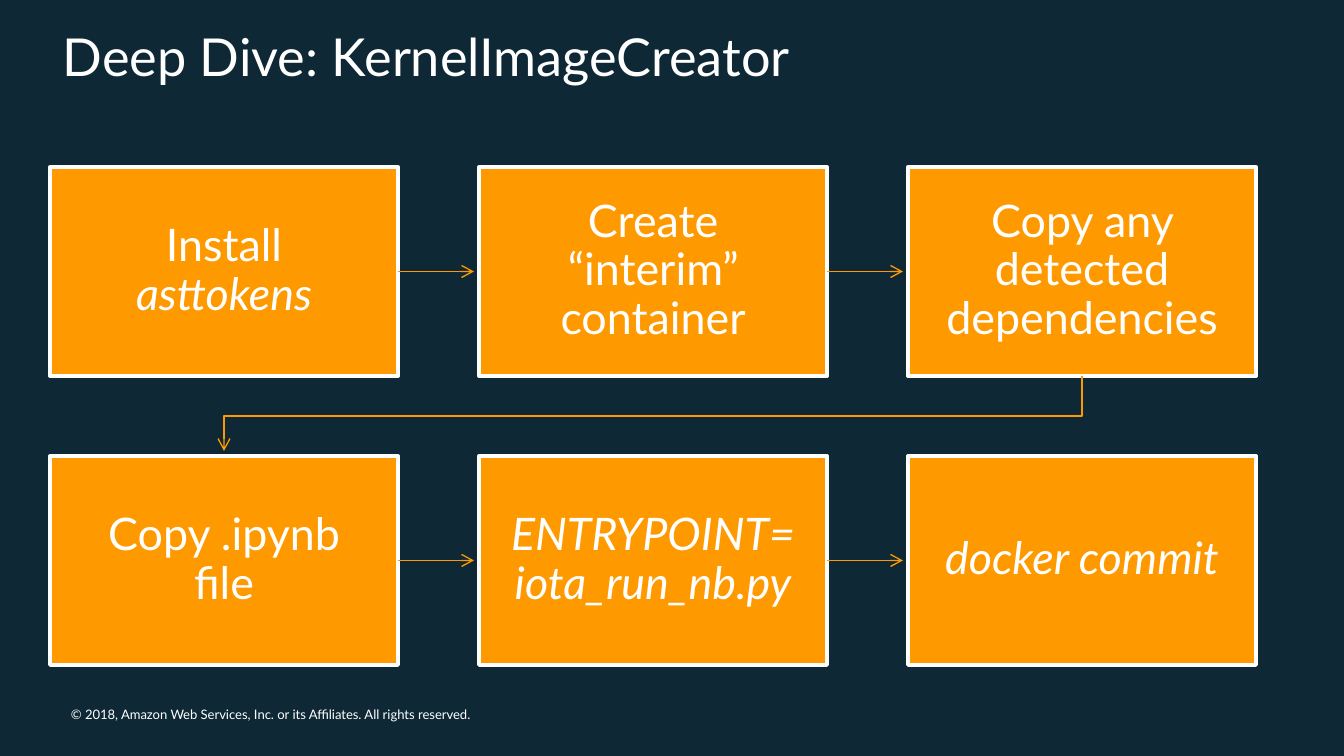
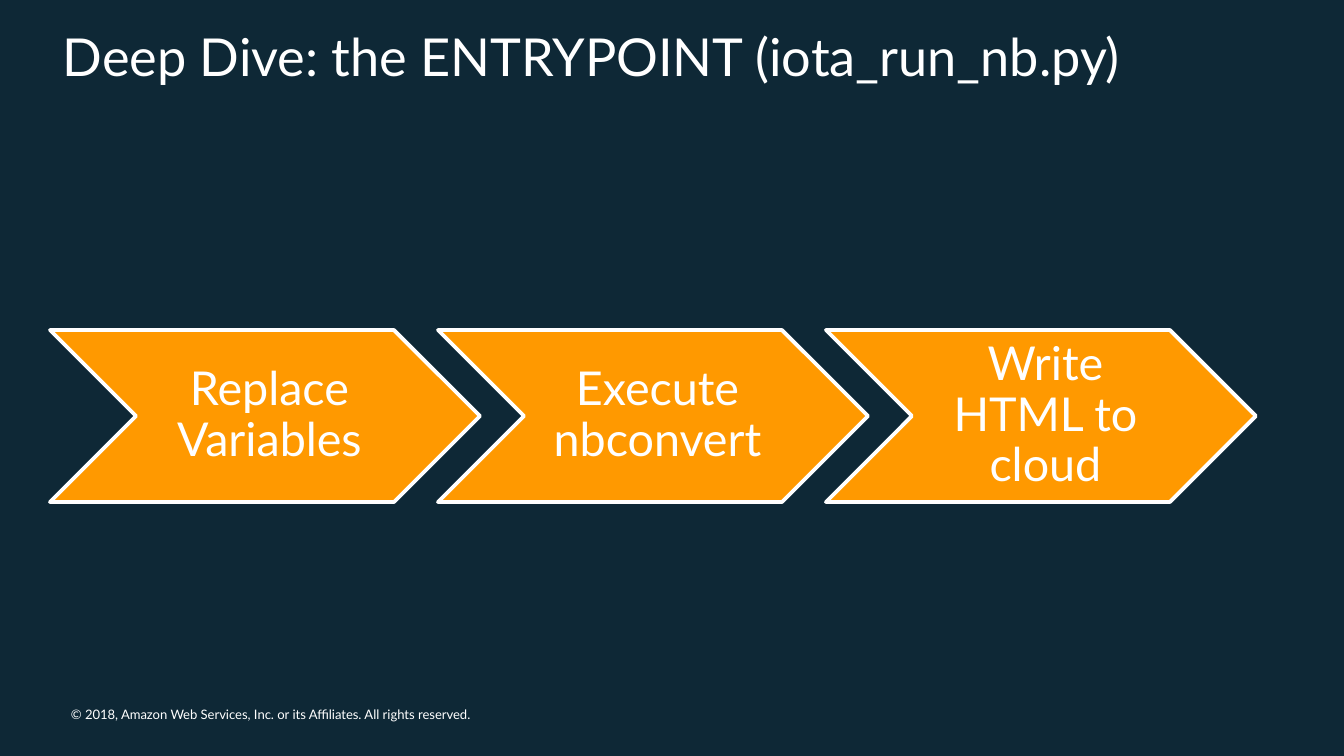
from pptx import Presentation
from pptx import util as u
from pptx.dml.color import RGBColor
from pptx.enum import shapes, text
from pptx.oxml.ns import qn
from lxml import etree

NAVY, GOLD, WHITE = "0E2836", "FF9900", "FFFFFF"
FONT = "Lato"
LEFT, WIDE = 50, 1206
BOX_W, BOX_H, BOX_TOP = 348, 209, 167
STEP_X, STEP_Y, GAP = 429, 289, 5
CHEV_W, CHEV_H, CHEV_TOP = 430, 172, 330
NOTE = "© 2018, Amazon Web Services, Inc. or its Affiliates. All rights reserved."

STEPS = [
    [[("Install ", False), ("asttokens", True)],
     [("Create “interim” container", False)],
     [("Copy any detected dependencies", False)]],
    [[("Copy .ipynb file", False)],
     [("ENTRYPOINT=\niota_run_nb.py", True)],
     [("docker commit", True)]],
]
PHASES = ["Replace Variables", "Execute nbconvert", "Write HTML to cloud"]


def px(n):
    """Turn pixels into EMU."""
    return u.Emu(round(n * 914400 / 134.4))


def color(code):
    """Turn a hex string into a colour."""
    return RGBColor.from_string(code)


def write(frame, runs, size, pads, mid=False):
    """Fill a text frame with (words, italic) runs."""
    frame.word_wrap = True
    (frame.margin_left, frame.margin_top,
     frame.margin_right, frame.margin_bottom) = map(px, pads)
    frame.vertical_anchor = text.MSO_ANCHOR.MIDDLE if mid else text.MSO_ANCHOR.TOP
    para = frame.paragraphs[0]
    para.alignment = text.PP_ALIGN.CENTER if mid else text.PP_ALIGN.LEFT
    if mid:
        para.line_spacing = 0.9
    for words, slant in runs:
        for i, line in enumerate(words.split("\n")):
            if i:
                para.add_line_break()
            run = para.add_run()
            run.text = line
            font = run.font
            font.name, font.size, font.italic = FONT, u.Pt(size), slant
            font.color.rgb = color(WHITE)


def label(slide, words, size, area, pads):
    """Add a plain text box."""
    box = slide.shapes.add_textbox(*map(px, area))
    write(box.text_frame, [(words, False)], size, pads)


def panel(slide, kind, area, runs, size, pads):
    """Add a gold shape with a white edge and centred text."""
    shape = slide.shapes.add_shape(kind, *map(px, area))
    shape.shadow.inherit = False
    shape.fill.solid()
    shape.fill.fore_color.rgb = color(GOLD)
    shape.line.color.rgb = color(WHITE)
    shape.line.width = u.Pt(2)
    write(shape.text_frame, runs, size, pads, True)
    return shape


def arrow(shape):
    """Style a line as a thin gold arrow without shadow."""
    shape.line.color.rgb = color(GOLD)
    shape.line.width = u.Pt(0.75)
    tail = etree.SubElement(shape.line._get_or_add_ln(), qn("a:tailEnd"))
    tail.set("type", "arrow")
    etree.SubElement(shape._element.spPr, qn("a:effectLst"))


def link(slide, box, x, y):
    """Draw an arrow from the right side of a box."""
    line = slide.shapes.add_connector(
        shapes.MSO_CONNECTOR.STRAIGHT, px(x), px(y),
        px(x + STEP_X - BOX_W - GAP), px(y))
    line.begin_connect(box, 3)
    arrow(line)


def bend(slide):
    """Draw the bent arrow from the first row to the second."""
    start, end = LEFT + 2 * STEP_X + BOX_W // 2, LEFT + BOX_W // 2
    top, low = BOX_TOP + BOX_H, BOX_TOP + STEP_Y
    mid = (top + low) // 2
    form = slide.shapes.build_freeform(px(start), px(top))
    form.add_line_segments(
        [(px(x), px(y)) for x, y in
         [(start, mid), (end, mid), (end, low - GAP)]], close=False)
    line = form.convert_to_shape()
    line.fill.background()
    arrow(line)


def start(deck, title):
    """Add a slide with the shared ground, footer and title."""
    slide = deck.slides.add_slide(deck.slide_layouts[6])
    slide.background.fill.solid()
    slide.background.fill.fore_color.rgb = color(NAVY)
    label(slide, NOTE, 7, (71, 706, 445, 16), (0, 0, 0, 0))
    label(slide, title, 28, (LEFT, 17, WIDE, 81), (13, 7, 13, 7))
    return slide


def flow(slide):
    """Lay out the two rows of steps with their arrows."""
    for row, line in enumerate(STEPS):
        for col, runs in enumerate(line):
            x, y = LEFT + col * STEP_X, BOX_TOP + row * STEP_Y
            box = panel(slide, shapes.MSO_SHAPE.RECTANGLE,
                        (x, y, BOX_W, BOX_H), runs, 24, (25, 25, 25, 25))
            if col < len(line) - 1:
                link(slide, box, x + BOX_W, y + BOX_H / 2)
    bend(slide)


def chain(slide):
    """Lay out the row of chevrons."""
    step = (WIDE - CHEV_W) // (len(PHASES) - 1)
    for i, words in enumerate(PHASES):
        panel(slide, shapes.MSO_SHAPE.CHEVRON,
              (LEFT + i * step, CHEV_TOP, CHEV_W, CHEV_H),
              [(words, False)], 25, (14, 5, 5, 5))


def main():
    """Build and save the deck."""
    deck = Presentation()
    deck.slide_width, deck.slide_height = px(1344), px(756)
    flow(start(deck, "Deep Dive: KernelImageCreator"))
    chain(start(deck, "Deep Dive: the ENTRYPOINT (iota_run_nb.py)"))
    deck.save("out.pptx")


if __name__ == "__main__":
    main()
